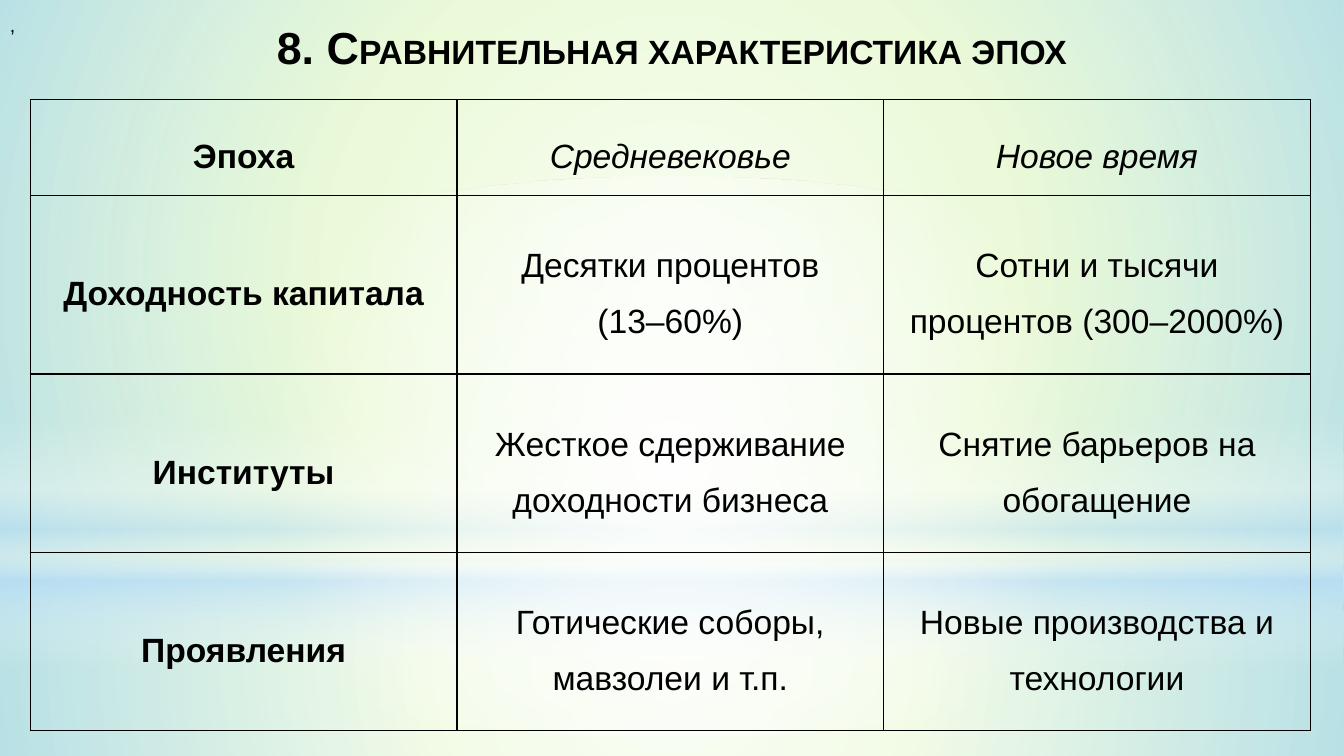
from pptx import Presentation
from pptx.dml.color import RGBColor
from pptx.enum.shapes import MSO_SHAPE as Preset
from pptx.enum.text import MSO_ANCHOR as Anchor, PP_ALIGN as Align
from pptx.oxml import parse_xml
from pptx.oxml.ns import nsdecls
from pptx.util import Inches, Pt

BLACK = RGBColor(0x00, 0x00, 0x00)
WHITE = RGBColor(0xFF, 0xFF, 0xFF)
SKY = RGBColor(0xB4, 0xDC, 0xFA)
LIME = RGBColor(0xCA, 0xF2, 0x97)

RADIAL = ('<a:path path="circle"><a:fillToRect l="50000" t="50000" '
          'r="50000" b="50000"/></a:path>')
DOWNWARD = '<a:lin ang="5400000" scaled="0"/>'


class SlideBuilder:
    """Places elements on a grid of 100 columns by 100 rows."""
    font = "Arial"
    body_size = 24

    def __init__(self, deck):
        self.col = deck.slide_width / 100
        self.row = deck.slide_height / 100
        self.slide = deck.slides.add_slide(deck.slide_layouts[6])

    def box(self, left, top, width, height):
        return (round(left * self.col), round(top * self.row),
                round(width * self.col), round(height * self.row))

    def background(self, color):
        fill = self.slide.background.fill
        fill.solid()
        fill.fore_color.rgb = color

    def glow(self, preset, area, stops, direction):
        """Gradient shape; stops are (position %, color, opacity %)."""
        glow = self.slide.shapes.add_shape(preset, *self.box(*area))
        glow.shadow.inherit = False
        glow.line.fill.background()
        glow.fill.background()
        stop_xml = "".join(
            f'<a:gs pos="{pos * 1000}"><a:srgbClr val="{color}">'
            f'<a:alpha val="{opacity * 1000}"/></a:srgbClr></a:gs>'
            for pos, color, opacity in stops)
        gradient = parse_xml(
            f'<a:gradFill {nsdecls("a")} rotWithShape="1">'
            f'<a:gsLst>{stop_xml}</a:gsLst>{direction}</a:gradFill>')
        properties = glow.element.spPr
        properties.replace(properties.find("{*}noFill"), gradient)

    def add_runs(self, paragraph, runs, align, spacing, bold=False,
                 italic=False):
        paragraph.alignment = align
        paragraph.line_spacing = spacing
        for words, size in runs:
            run = paragraph.add_run()
            run.text = words
            run.font.name = self.font
            run.font.size = Pt(size)
            run.font.color.rgb = BLACK
            run.font.bold = bold
            run.font.italic = italic

    def text(self, area, runs, align, spacing=1.0, bold=False):
        frame = self.slide.shapes.add_textbox(*self.box(*area)).text_frame
        frame.word_wrap = True
        frame.vertical_anchor = Anchor.MIDDLE
        self.add_runs(frame.paragraphs[0], runs, align, spacing, bold)

    def outline(self, cell):
        properties = cell._tc.get_or_add_tcPr()
        for order, side in enumerate("LRTB"):
            properties.insert(order, parse_xml(
                f'<a:ln{side} {nsdecls("a")} w="{Pt(1)}"><a:solidFill>'
                f'<a:srgbClr val="{BLACK}"/></a:solidFill></a:ln{side}>'))

    def table(self, left, top, col_width, row_heights, content):
        columns = len(content[0])
        area = self.box(left, top, col_width * columns, sum(row_heights))
        table = self.slide.shapes.add_table(len(content), columns, *area).table
        table.first_row = table.horz_banding = False
        for column in table.columns:
            column.width = round(col_width * self.col)
        for r, (height, entries) in enumerate(zip(row_heights, content)):
            table.rows[r].height = round(height * self.row)
            for c, entry in enumerate(entries):
                self.cell(table.cell(r, c), entry,
                          bold=c == 0, italic=r == 0 and c > 0)

    def cell(self, cell, entry, bold, italic):
        cell.fill.background()
        self.outline(cell)
        cell.vertical_anchor = Anchor.MIDDLE
        cell.margin_left = cell.margin_right = Inches(0.07)
        cell.margin_top = cell.margin_bottom = 0
        frame = cell.text_frame
        for i, line in enumerate(entry.split("\n")):
            paragraph = frame.add_paragraph() if i else frame.paragraphs[0]
            self.add_runs(paragraph, [(line, self.body_size)], Align.CENTER,
                          1.5, bold, italic)


def main():
    deck = Presentation()
    deck.slide_width, deck.slide_height = Inches(13.33), Inches(7.5)
    page = SlideBuilder(deck)

    # Backdrop of soft light
    page.background(LIME)
    page.glow(Preset.RECTANGLE, (0, 74.4, 100, 25.6),
              [(0, WHITE, 91), (37, WHITE, 76), (100, SKY, 79)], RADIAL)
    page.glow(Preset.RECTANGLE, (0, 0, 100, 74.4),
              [(0, WHITE, 89), (48, WHITE, 62), (100, SKY, 79)], RADIAL)
    page.glow(Preset.RECTANGLE, (0, 54.93, 100, 33.33),
              [(0, WHITE, 0), (29, WHITE, 30), (45, SKY, 40),
               (55, WHITE, 26), (65, SKY, 60), (100, WHITE, 0)], DOWNWARD)
    page.glow(Preset.OVAL, (0, 23.33, 100, 74.4),
              [(0, WHITE, 100), (56, WHITE, 0)], RADIAL)

    # Title and the stray comma in the corner
    page.text((0, 0, 100, 13.2),
              [("8. С", 32), ("РАВНИТЕЛЬНАЯ ХАРАКТЕРИСТИКА ЭПОХ", 24)],
              Align.CENTER, spacing=0.9, bold=True)
    page.text((0, 1, 100, 4.4), [(",", 14)], Align.LEFT)

    # Comparison of the two epochs
    epochs = [
        ("Эпоха", "Средневековье", "Новое время"),
        ("Доходность капитала", "Десятки процентов\n(13–60%)",
         "Сотни и тысячи процентов (300–2000%)"),
        ("Институты", "Жесткое сдерживание доходности бизнеса",
         "Снятие барьеров на обогащение"),
        ("Проявления", "Готические соборы, мавзолеи и т.п.",
         "Новые производства и технологии"),
    ]
    page.table(2.25, 13.2, 31.75, [12.67] + [23.6] * 3, epochs)

    deck.save("out.pptx")


if __name__ == "__main__":
    main()
